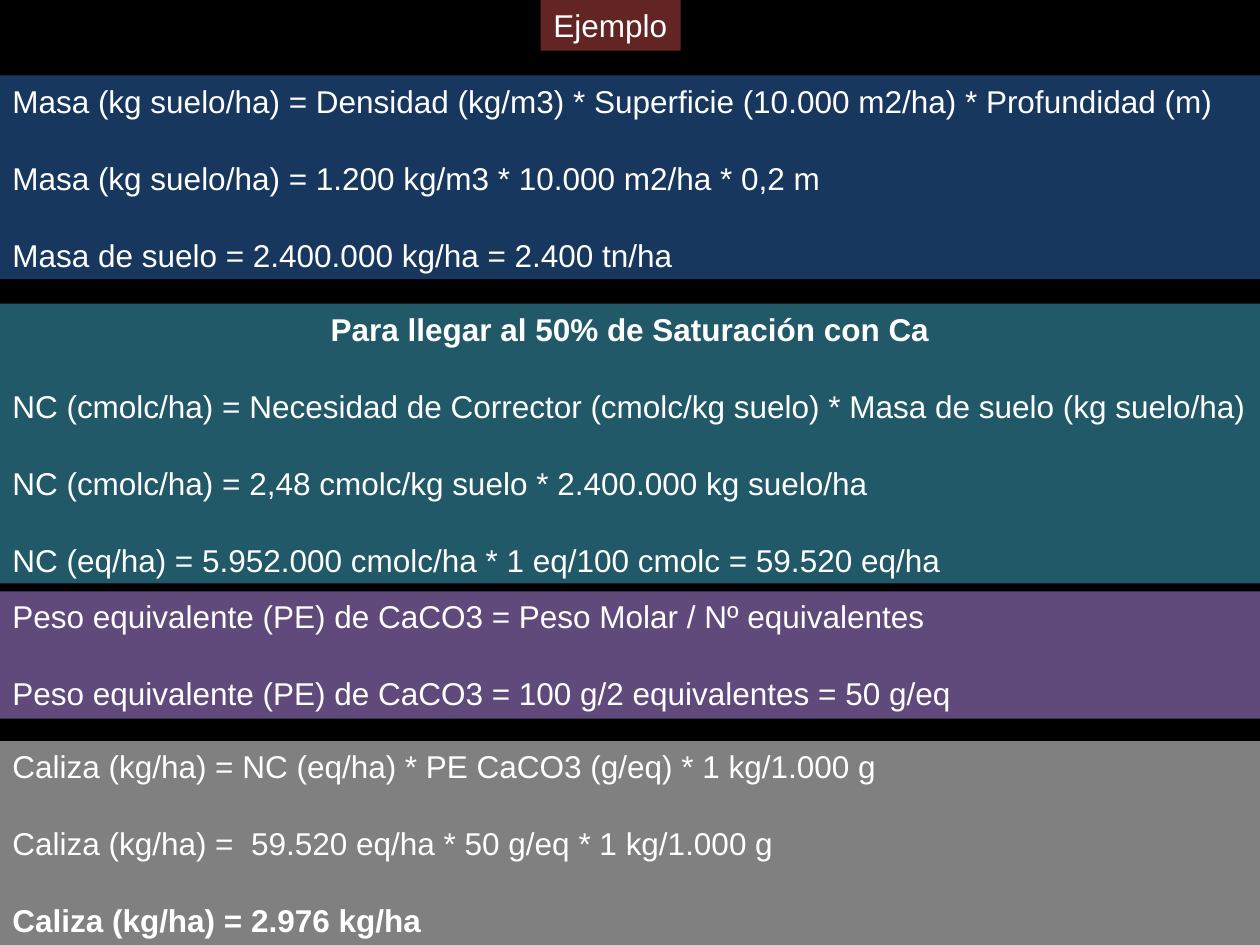
import pptx
import pptx.util
import pptx.dml.color
import pptx.enum.shapes
import pptx.enum.text

Cm = pptx.util.Cm
Pt = pptx.util.Pt
Align = pptx.enum.text.PP_ALIGN


def color(fmt, code):
    fmt.rgb = pptx.dml.color.RGBColor.from_string(code)


def write(shape, lines, fill, wrap, gap):
    shape.fill.solid()
    color(shape.fill.fore_color, fill)
    frame = shape.text_frame
    form = {
        "word_wrap": wrap,
        "auto_size": pptx.enum.text.MSO_AUTO_SIZE.NONE,
        "vertical_anchor": pptx.enum.text.MSO_ANCHOR.TOP,
    }
    for key, value in form.items():
        setattr(frame, key, value)
    for row, (text, bold, align) in enumerate(lines):
        para = frame.add_paragraph() if row else frame.paragraphs[0]
        para.alignment = align
        para.space_before = Pt(gap if row else 0)
        run = para.add_run()
        run.text = text
        font = {"name": "Arial", "size": Pt(18), "bold": bold}
        for key, value in font.items():
            setattr(run.font, key, value)
        color(run.font.color, "FFFFFF")


deck = pptx.Presentation()
deck.slide_width = Cm(25.4)
deck.slide_height = Cm(19.05)
slide = deck.slides.add_slide(deck.slide_layouts[5])
slide.background.fill.solid()
color(slide.background.fill.fore_color, "000000")

left = Align.LEFT
bands = [
    (1.52, 4.11, "17375E", [
        ("Masa (kg suelo/ha) = Densidad (kg/m3) * Superficie (10.000 m2/ha) * Profundidad (m)", False, left),
        ("Masa (kg suelo/ha) = 1.200 kg/m3 * 10.000 m2/ha * 0,2 m", False, left),
        ("Masa de suelo = 2.400.000 kg/ha = 2.400 tn/ha", False, left),
    ]),
    (6.12, 5.64, "215968", [
        ("Para llegar al 50% de Saturación con Ca", True, Align.CENTER),
        ("NC (cmolc/ha) = Necesidad de Corrector (cmolc/kg suelo) * Masa de suelo (kg suelo/ha)", False, left),
        ("NC (cmolc/ha) = 2,48 cmolc/kg suelo * 2.400.000 kg suelo/ha", False, left),
        ("NC (eq/ha) = 5.952.000 cmolc/ha * 1 eq/100 cmolc = 59.520 eq/ha", False, left),
    ]),
    (11.92, 2.57, "604A7B", [
        ("Peso equivalente (PE) de CaCO3 = Peso Molar / Nº equivalentes", False, left),
        ("Peso equivalente (PE) de CaCO3 = 100 g/2 equivalentes = 50 g/eq", False, left),
    ]),
    (14.94, 4.11, "808080", [
        ("Caliza (kg/ha) = NC (eq/ha) * PE CaCO3 (g/eq) * 1 kg/1.000 g", False, left),
        ("Caliza (kg/ha) =  59.520 eq/ha * 50 g/eq * 1 kg/1.000 g", False, left),
        ("Caliza (kg/ha) = 2.976 kg/ha", True, left),
    ]),
]
for top, height, fill, lines in bands:
    band = slide.shapes.add_shape(
        pptx.enum.shapes.MSO_SHAPE.RECTANGLE, 0, Cm(top), deck.slide_width, Cm(height))
    band.shadow.inherit = False
    band.line.fill.background()
    write(band, lines, fill, True, 22.4)

title = slide.shapes.title
place = {"left": Cm(10.9), "top": Cm(0), "width": Cm(2.82), "height": Cm(1.02)}
for key, value in place.items():
    setattr(title, key, value)
write(title, [("Ejemplo", False, left)], "632523", False, 0)

deck.save("out.pptx")
